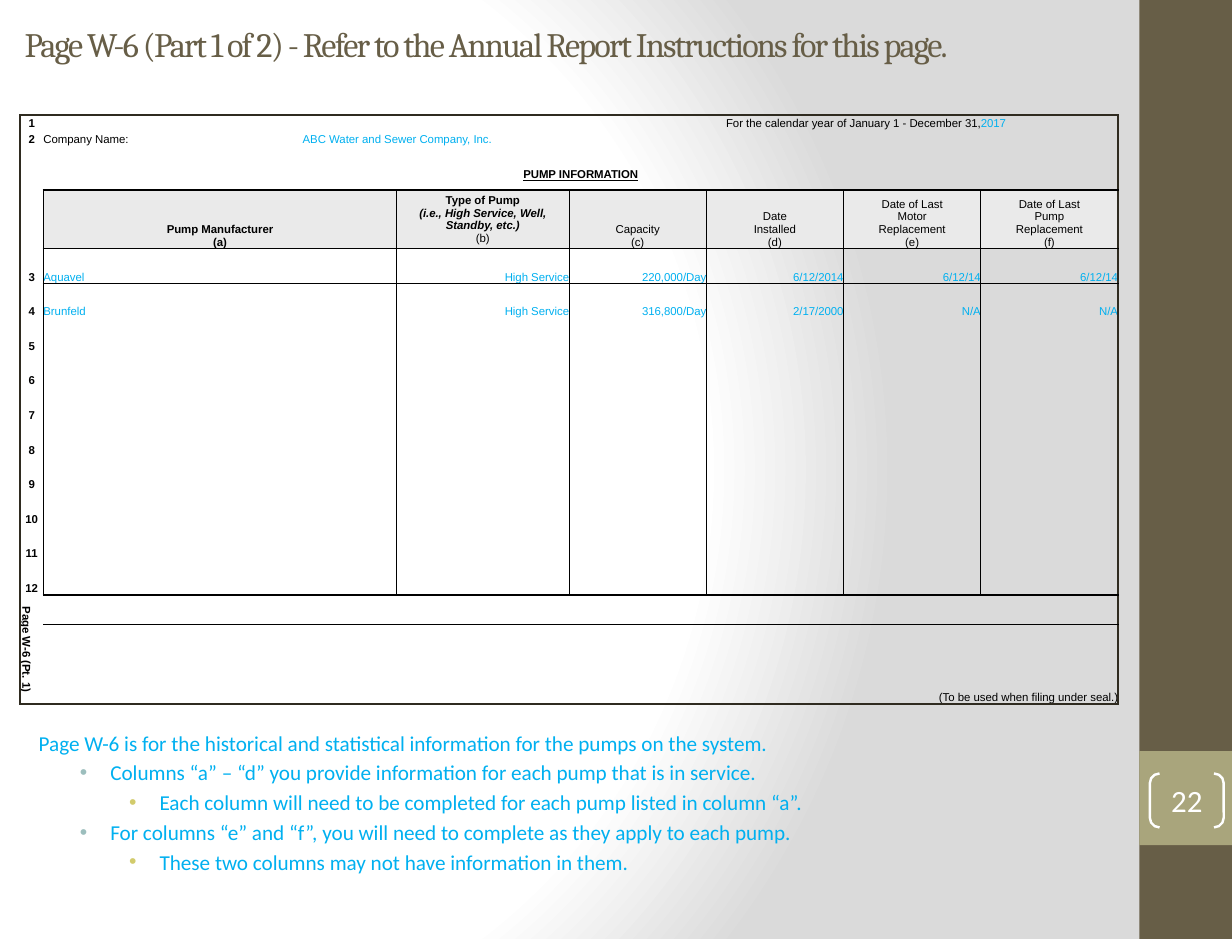
from copy import deepcopy
from dataclasses import dataclass
from pptx import Presentation
from pptx.dml.color import RGBColor as RGB
from pptx.enum.shapes import MSO_SHAPE as Shape
from pptx.enum.text import MSO_ANCHOR as Anchor, MSO_AUTO_SIZE as Auto, PP_ALIGN as Align
from pptx.oxml import parse_xml
from pptx.oxml.ns import nsdecls, qn
from pptx.util import Inches, Pt
from lxml.etree import SubElement as Sub


@dataclass(frozen=True)
class Theme:
    olive: str = "675E47"
    sage: str = "A9A57C"
    white: str = "FFFFFF"
    black: str = "000000"
    frame: str = "2F2B20"
    blue: str = "00B0F0"
    head: str = "EAEAEA"
    mist: str = "DADADA"
    dots: tuple = (None, "9CBEBD", "D2CB6C")
    serif: str = "Cambria"
    sans: str = "Calibri"
    form: str = "Arial"
    title: float = 21
    body: float = 13
    cell: float = 7
    page: float = 19


T = Theme()
BLUE = {"color": T.blue}
BOLD = {"bold": True}
NO_STYLE = "{2D5ABB26-0587-4C30-8999-92F81FD0307C}"


def apply(obj, vals):
    for key, val in vals.items():
        setattr(obj, key, val)


class Deck:
    def __init__(self, wide, high):
        self.prs = Presentation()
        apply(self.prs, {"slide_width": Inches(wide), "slide_height": Inches(high)})
        self.page = self.prs.slides.add_slide(self.prs.slide_layouts[5])

    def back(self, stops, left, top, right, low):
        marks = "".join(
            f'<a:gs pos="{pos * 1000}"><a:srgbClr val="{hue}"/></a:gs>' for pos, hue in stops)
        node = parse_xml(
            f'<p:bg {nsdecls("p", "a")}><p:bgPr><a:gradFill rotWithShape="1">'
            f'<a:gsLst>{marks}</a:gsLst><a:path path="circle"><a:fillToRect '
            f'l="{left * 1000}" t="{top * 1000}" r="{right * 1000}" b="{low * 1000}"/>'
            '</a:path></a:gradFill><a:effectLst/></p:bgPr></p:bg>')
        self.page._element.cSld.insert(0, node)

    def put(self, par, text, face, size, color=T.black, **fmt):
        for num, line in enumerate(text.split("\n")):
            if num:
                par.add_line_break()
                par._p[-1].append(deepcopy(run._r.rPr))
            run = par.add_run()
            run.text = line
            apply(run.font, {"name": face, "size": Pt(size), **fmt})
            run.font.color.rgb = RGB.from_string(color)
        return run

    def place(self, item, box):
        apply(item, dict(zip(("left", "top", "width", "height"), map(Inches, box))))

    def frame(self, item, pad=(0.11, 0.05), **vals):
        side, edge = map(Inches, pad)
        apply(item.text_frame, {
            "margin_left": side, "margin_right": side, "margin_top": edge,
            "margin_bottom": edge, "word_wrap": True, "auto_size": Auto.NONE, **vals})
        return item.text_frame

    def title(self, text, box):
        item = self.page.shapes.title
        self.place(item, box)
        par = self.frame(item, vertical_anchor=Anchor.MIDDLE).paragraphs[0]
        par.alignment = Align.LEFT
        par._p.get_or_add_pPr().set("marL", str(Inches(0.1)))
        run = self.put(par, text, T.serif, T.title, T.olive)
        run._r.rPr.set("spc", "-110")

    def shape(self, kind, box, fill=None, line=None):
        item = self.page.shapes.add_shape(kind, *map(Inches, box))
        item.shadow.inherit = False
        if fill:
            item.fill.solid()
            item.fill.fore_color.rgb = RGB.from_string(fill)
        else:
            item.fill.background()
        if line:
            item.line.color.rgb = RGB.from_string(line)
            item.line.width = Pt(1.5)
        else:
            item.line.fill.background()
        return item

    def badge(self, text, box):
        item = self.shape(Shape.DOUBLE_BRACKET, box, line=T.white)
        item.adjustments[0] = 0.18
        par = self.frame(item, (0, 0), vertical_anchor=Anchor.MIDDLE).paragraphs[0]
        par.alignment = Align.CENTER
        self.put(par, text, T.sans, T.page, T.white)

    def notes(self, lines, box):
        area = self.frame(self.page.shapes.add_textbox(*map(Inches, box)))
        dents = ((0.13, 0), (0.74, -0.26), (1.16, -0.26))
        for num, (level, text) in enumerate(lines):
            par = area.add_paragraph() if num else area.paragraphs[0]
            apply(par, {"level": level, "alignment": Align.JUSTIFY,
                        "space_before": Pt(0.2 * T.body)})
            props = par._p.get_or_add_pPr()
            for key, val in zip(("marL", "indent"), dents[level]):
                props.set(key, str(Inches(val)))
            if level:
                Sub(Sub(props, qn("a:buClr")), qn("a:srgbClr"), val=T.dots[level])
                Sub(props, qn("a:buFont"), typeface=T.form)
                Sub(props, qn("a:buChar"), char="•")
            self.put(par, text, T.sans, T.body, T.blue)

    def edge(self, cell, side, color, width):
        line = Sub(cell._tc.get_or_add_tcPr(), qn(f"a:ln{side}"), w=str(Pt(width)))
        Sub(Sub(line, qn("a:solidFill")), qn("a:srgbClr"), val=color)

    def rules(self, cell, row, col, high, wide):
        grid = 4 <= row <= 14
        thick, thin, rim = (T.black, 1), (T.black, 0.5), (T.frame, 1)
        last, base = col + wide == 8, row + high == 19
        sides = {
            "L": rim if col == 0 else grid and (thick if col == 1 else thin),
            "R": rim if last else grid and (thin if col else thick),
            "T": rim if row == 0 else col and row in (4, 5, 15) and thick,
            "B": rim if base else col and row in (3, 4, 14) and thick}
        for side, style in sides.items():
            if style:
                self.edge(cell, side, *style)

    def table(self, box, cols, rows, spans, cells):
        grid = self.page.shapes.add_table(len(rows), len(cols), *map(Inches, box)).table
        apply(grid, {"first_row": False, "horz_banding": False})
        grid._tbl.tblPr.find(qn("a:tableStyleId")).text = NO_STYLE
        for col, size in zip(grid.columns, cols):
            col.width = Inches(size)
        for row, size in zip(grid.rows, rows):
            row.height = Inches(size)
        for (row, col), (high, wide) in spans.items():
            grid.cell(row, col).merge(grid.cell(row + high - 1, col + wide - 1))
        for row in range(len(rows)):
            for col in range(len(cols)):
                cell = grid.cell(row, col)
                self.rules(cell, row, col, *spans.get((row, col), (1, 1)))
                apply(cell, dict.fromkeys(
                    ("margin_left", "margin_right", "margin_top", "margin_bottom"), 0))
                mid = row == 3 or (row, col) in ((4, 3), (15, 0))
                cell.vertical_anchor = Anchor.MIDDLE if mid else Anchor.BOTTOM
                if row == 4 and col:
                    cell.fill.solid()
                    cell.fill.fore_color.rgb = RGB.from_string(T.head)
                else:
                    cell.fill.background()
                par = cell.text_frame.paragraphs[0]
                if (row, col) in cells:
                    par.alignment, *runs = cells[row, col]
                    for text, fmt in runs:
                        self.put(par, text, T.form, T.cell, **fmt)
                else:
                    Sub(par._p, qn("a:endParaRPr"), sz=str(int(T.cell * 100)))
        grid.cell(15, 0)._tc.tcPr.set("vert", "vert")


def form():
    mid, left, right = Align.CENTER, Align.LEFT, Align.RIGHT
    spans = {(0, 4): (1, 3), (1, 2): (1, 6), (2, 1): (1, 7), (3, 1): (1, 7),
             (15, 0): (4, 1), (15, 1): (1, 7), (18, 6): (1, 2)}
    spans.update({(row, 1): (1, 2) for row in range(4, 15)})
    cells = {
        (0, 0): (mid, ("1", BOLD)),
        (0, 4): (right, ("For the calendar year of January 1 - December 31,", {})),
        (0, 7): (left, ("2017", BLUE)),
        (1, 0): (mid, ("2", BOLD)),
        (1, 1): (left, ("Company Name:", {})),
        (1, 2): (left, ("ABC Water and Sewer Company, Inc.", BLUE)),
        (3, 1): (mid, ("PUMP INFORMATION", {"bold": True, "underline": True})),
        (4, 1): (mid, ("Pump Manufacturer\n(a)", BOLD)),
        (4, 3): (mid, ("Type of Pump\n", BOLD),
                 ("(i.e., High Service, Well, Standby, etc.)\n", {"bold": True, "italic": True}),
                 ("(b)", {})),
        (15, 0): (mid, ("Page W-6 (Pt. 1)", BOLD)),
        (18, 6): (right, ("(To be used when filing under seal.)", {}))}
    heads = ("Capacity\n(c)", "Date\nInstalled\n(d)",
             "Date of Last\nMotor\nReplacement\n(e)", "Date of Last\nPump\nReplacement\n(f)")
    cells.update({(4, col): (mid, (text, {})) for col, text in enumerate(heads, 4)})
    cells.update({(num + 2, 0): (mid, (str(num), BOLD)) for num in range(3, 13)})
    pumps = (("Aquavel", "High Service", "220,000/Day", "6/12/2014", "6/12/14", "6/12/14"),
             ("Brunfeld", "High Service", "316,800/Day", "2/17/2000", "N/A", "N/A"))
    for row, (maker, *facts) in enumerate(pumps, 5):
        cells[row, 1] = left, (maker, BLUE)
        cells.update({(row, col): (right, (text, BLUE)) for col, text in enumerate(facts, 3)})
    return spans, cells


def main():
    deck = Deck(10.5, 8)
    deck.back(((0, T.white), (75, T.white), (100, T.mist)), 20, 50, 100, 50)
    deck.shape(Shape.RECTANGLE, (9.71, 0, 0.79, 8), T.olive)
    deck.shape(Shape.RECTANGLE, (9.71, 6.4, 0.79, 0.8), T.sage)
    deck.title("Page W-6 (Part 1 of 2) - Refer to the Annual Report Instructions for this page.",
               (0, 0, 9.75, 0.75))
    cols = [0.2, 2.21, 0.8, 1.47] + [1.17] * 4
    rows = [0.13, 0.13, 0.12, 0.26, 0.5] + [0.295] * 10 + [0.25, 0.12, 0.22, 0.34]
    deck.table((0.17, 0.98, 9.36, 5.02), cols, rows, *form())
    deck.notes((
        (0, "Page W-6 is for the historical and statistical information for the pumps on the system."),
        (1, "Columns “a” – “d” you provide information for each pump that is in service."),
        (2, "Each column will need to be completed for each pump listed in column “a”."),
        (1, "For columns “e” and “f”, you will need to complete as they apply to each pump."),
        (2, "These two columns may not have information in them.")), (0.09, 6.17, 9.45, 1.33))
    deck.badge("22", (9.8, 6.59, 0.63, 0.46))
    deck.prs.save("out.pptx")


if __name__ == "__main__":
    main()
